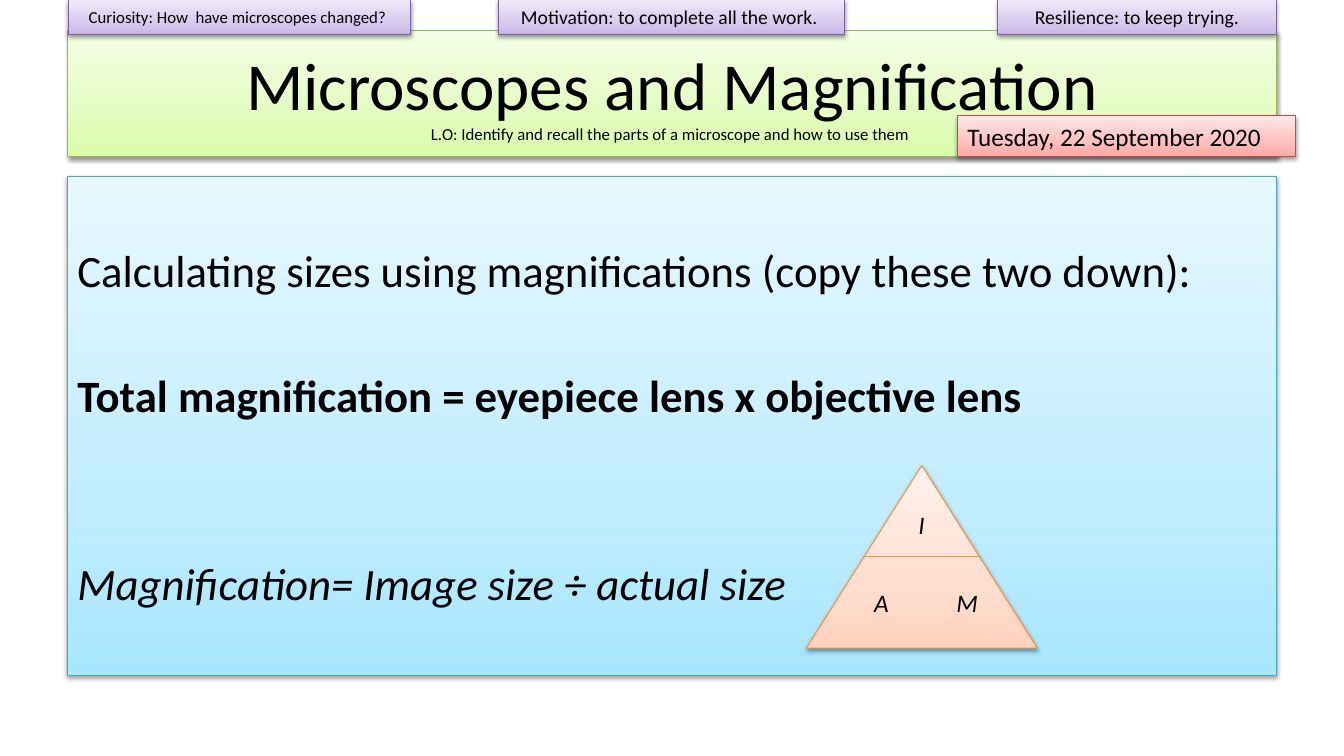
from copy import deepcopy

from pptx import Presentation
from pptx import util as u
from pptx.dml import color
from pptx.enum import shapes, text
from pptx.oxml import parse_xml
from pptx.oxml import ns

FONT = "Calibri"
BLACK = "000000"
STOPS = (0, 0.35, 1)
LEFT, CENTER = text.PP_ALIGN.LEFT, text.PP_ALIGN.CENTER

PALETTES = {
    "blue": (("A7E6FF", "C1EDFF", "E7F8FF"), "46AAC5"),
    "green": (("DAFDA7", "E4FCC2", "F5FFE7"), "98B955"),
    "red": (("FFA6A5", "FFC0BF", "FFE7E7"), "BF4C48"),
    "purple": (("C9B5E8", "D8CBEE", "F0EAF9"), "7D60A0"),
    "orange": (("FFD2BD", "FFDED0", "FFF2ED"), "F69240"),
}

# Each paragraph: text, run sizes, style, points before
LESSON = [
    ("Calculating sizes using magnifications (copy these two down):", (32,), "", 6),
    ("Total magnification = eyepiece lens x objective lens", (32,), "bold", 51),
    ("Magnification= Image size ÷ actual size", (32,), "italic", 96),
]
TITLE = [("Microscopes and Magnification\v"
          "L.O: Identify and recall the parts of a microscope and how to use them ",
          (48, 12), "", 0)]
DATE = [("Tuesday, 22 September 2020", (18,), "", 0)]
MOTIVATION = [("Motivation: to complete all the work. ", (14,), "", 0)]
RESILIENCE = [("Resilience: to keep trying.", (14,), "", 0)]
CURIOSITY = [("Curiosity: How  have microscopes changed? ", (12,), "", 0)]

PANELS = [
    ((1.7, 4.45, 30.48, 12.57), "blue", LEFT, LESSON),
    ((1.7, 0.76, 30.48, 3.18), "green", CENTER, TITLE),
    ((24.13, 2.92, 8.51, 1.02), "red", LEFT, DATE),
    ((12.57, 0, 8.71, 0.86), "purple", CENTER, MOTIVATION),
    ((25.15, 0, 7.01, 0.86), "purple", CENTER, RESILIENCE),
    ((1.73, 0, 8.61, 0.86), "purple", CENTER, CURIOSITY),
]
TRIANGLE = (20.32, 11.73, 5.82, 4.6)
LABELS = [("I", 22.83, 12.42), ("A", 21.82, 14.38), ("M", 23.98, 14.38)]
LABEL_SIZE = (0.79, 1.6)

SHADOW = (f'<a:outerShdw {ns.nsdecls("a")} blurRad="40000" dist="20000" dir="5400000" '
          'rotWithShape="0"><a:srgbClr val="000000"><a:alpha val="38000"/>'
          '</a:srgbClr></a:outerShdw>')


def rgb(value):
    """Return the colour for a hex string."""
    return color.RGBColor.from_string(value)


def lengths(values):
    """Turn centimetres into slide lengths."""
    return [u.Cm(value) for value in values]


def outline(shape, value):
    """Draw a thin line in the given colour."""
    shape.line.color.rgb = rgb(value)
    shape.line.width = u.Pt(0.75)


def add_panel(slide, kind, box, palette):
    """Add a shape with a vertical gradient, an outline and a soft shadow."""
    shades, edge = PALETTES[palette]
    shape = slide.shapes.add_shape(kind, *lengths(box))
    shape.fill.gradient()
    shape.fill.gradient_angle = 90
    stop_list = shape.element.spPr.find(".//" + ns.qn("a:gsLst"))
    stop_list.append(deepcopy(stop_list[0]))
    for stop, position, shade in zip(shape.fill.gradient_stops, STOPS, shades):
        stop.position = position
        stop.color.rgb = rgb(shade)
    outline(shape, edge)
    shape.shadow.inherit = False
    shape.element.spPr.find(ns.qn("a:effectLst")).append(parse_xml(SHADOW))
    return shape


def write(shape, paragraphs, alignment):
    """Fill a shape with formatted paragraphs, centred vertically."""
    frame = shape.text_frame
    frame.word_wrap = True
    frame.vertical_anchor = text.MSO_ANCHOR.MIDDLE
    frame.text = "\n".join(item[0] for item in paragraphs)
    for paragraph, (_, sizes, style, before) in zip(frame.paragraphs, paragraphs):
        paragraph.alignment = alignment
        paragraph.space_before = u.Pt(before)
        for run, size in zip(paragraph.runs, sizes):
            run.font.name = FONT
            run.font.size = u.Pt(size)
            run.font.color.rgb = rgb(BLACK)
            run.font.bold = style == "bold"
            run.font.italic = style == "italic"


def add_formula_triangle(slide):
    """Add the divided triangle and its three letters."""
    add_panel(slide, shapes.MSO_SHAPE.ISOSCELES_TRIANGLE, TRIANGLE, "orange")
    left, top, width, height = TRIANGLE
    middle = top + height / 2
    ends = (left + width / 4, middle, left + width * 3 / 4, middle)
    divider = slide.shapes.add_connector(shapes.MSO_CONNECTOR.STRAIGHT, *lengths(ends))
    outline(divider, PALETTES["orange"][1])
    divider.element.spPr.append(parse_xml(f'<a:effectLst {ns.nsdecls("a")}/>'))
    for letter, x, y in LABELS:
        label = slide.shapes.add_textbox(*lengths((x, y) + LABEL_SIZE))
        label.text_frame.margin_left = label.text_frame.margin_right = 0
        write(label, [(letter, (18,), "italic", 0)], CENTER)


def main():
    """Build and save the slide."""
    presentation = Presentation()
    presentation.slide_width, presentation.slide_height = lengths((33.87, 19.05))
    slide = presentation.slides.add_slide(presentation.slide_layouts[6])
    for box, palette, alignment, paragraphs in PANELS:
        panel = add_panel(slide, shapes.MSO_SHAPE.RECTANGLE, box, palette)
        write(panel, paragraphs, alignment)
    add_formula_triangle(slide)
    presentation.save("out.pptx")


if __name__ == "__main__":
    main()
